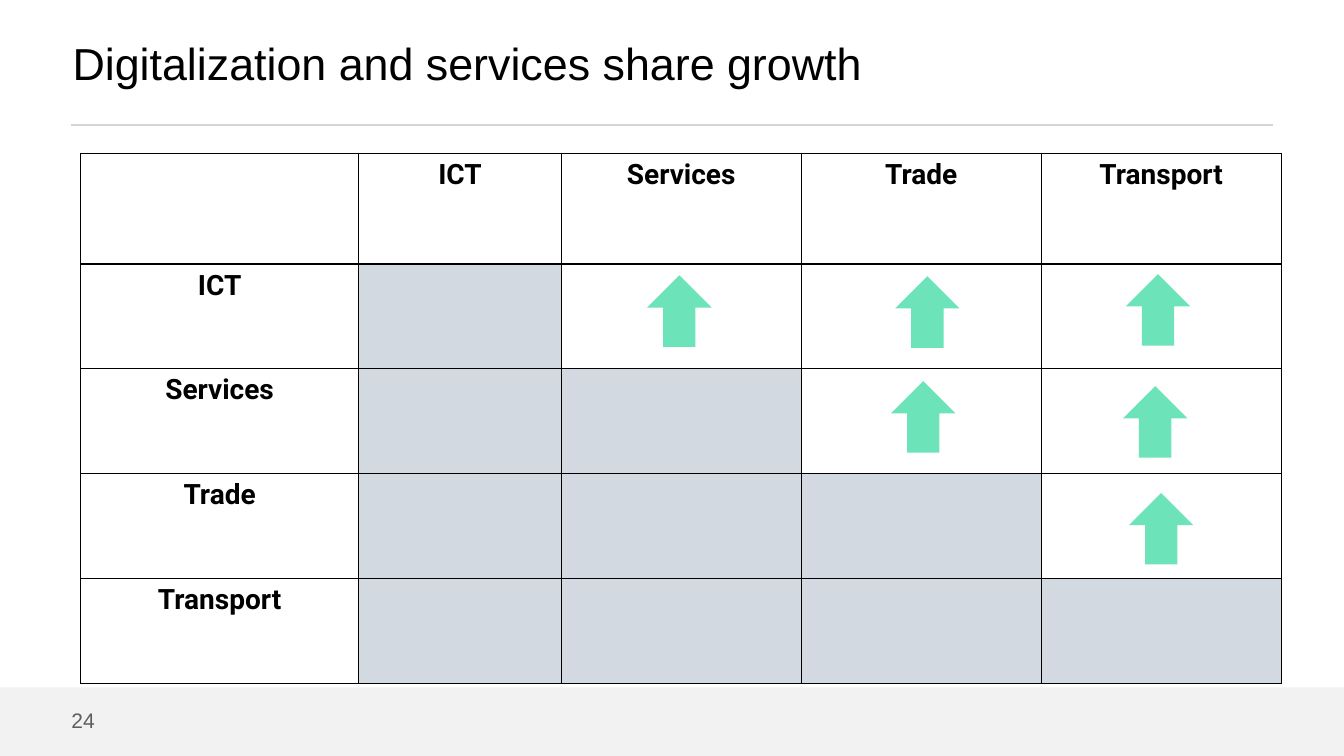
from dataclasses import dataclass
from typing import Any

from lxml import etree
from pptx import Presentation
from pptx.dml.color import RGBColor
from pptx.enum import shapes, text
from pptx.oxml.ns import qn
from pptx.util import Pt


@dataclass(frozen=True)
class Theme:
    ink: str = "000000"
    rule: str = "D5D5D5"
    band: str = "F2F2F2"
    page: str = "5E5E5E"
    shade: str = "D2D9E1"
    rise: str = "6CE3B9"
    head: str = "Arial"
    body: str = "Roboto"
    title: float = 32
    cell: float = 20
    foot: float = 15


@dataclass(frozen=True)
class Arrow:
    left: float
    top: float


THEME = Theme()
SECTORS = ["ICT", "Services", "Trade", "Transport"]
COLS = [198.7, 144.7] + [171.4] * 3
ROWS = [79.2] + [74.9] * 4
ARROWS = [
    Arrow(636.5, 272.2),
    Arrow(639.4, 197.3),
    Arrow(804.2, 195.8),
    Arrow(802.1, 275.8),
    Arrow(462.2, 196.6),
    Arrow(806.4, 352.1),
]


def paint(fill: Any, hue: str) -> None:
    fill.solid()
    fill.fore_color.rgb = RGBColor.from_string(hue)


def style(para: Any, face: str, size: float, hue: str, bold: bool = False) -> None:
    for run in para.runs:
        run.font.name = face
        run.font.size = Pt(size)
        run.font.bold = bold
        run.font.color.rgb = RGBColor.from_string(hue)


def inset(frame: Any) -> None:
    """Remove the margins and centre the text vertically."""
    frame.margin_left = frame.margin_right = 0
    frame.margin_top = frame.margin_bottom = 0
    frame.vertical_anchor = text.MSO_ANCHOR.MIDDLE


def solid(slide: Any, kind: Any, box: tuple[float, ...], hue: str) -> None:
    """Add a filled shape without line or shadow."""
    shape = slide.shapes.add_shape(kind, *map(Pt, box))
    shape.shadow.inherit = False
    paint(shape.fill, hue)
    shape.line.fill.background()


def border(cell: Any) -> None:
    props = cell._tc.get_or_add_tcPr()
    for spot, side in enumerate(("lnL", "lnR", "lnT", "lnB")):
        line = etree.Element(qn(f"a:{side}"), w=str(Pt(1)))
        fill = etree.SubElement(line, qn("a:solidFill"))
        etree.SubElement(fill, qn("a:srgbClr"), val=THEME.ink)
        props.insert(spot, line)


def frame(slide: Any) -> None:
    """Add the rule, the footer band and the page number."""
    rule = slide.shapes.add_connector(
        shapes.MSO_CONNECTOR.STRAIGHT, Pt(51), Pt(89.3), Pt(909.4), Pt(89.3))
    rule.line.color.rgb = RGBColor.from_string(THEME.rule)
    rule.line.width = Pt(1.5)
    etree.SubElement(rule._element.spPr, qn("a:effectLst"))
    solid(slide, shapes.MSO_SHAPE.RECTANGLE, (0, 491, 960, 49), THEME.band)
    page = slide.shapes.add_textbox(Pt(51), Pt(505.4), Pt(17), Pt(18)).text_frame
    page.text = "24"
    page.word_wrap = False
    page.auto_size = text.MSO_AUTO_SIZE.SHAPE_TO_FIT_TEXT
    inset(page)
    style(page.paragraphs[0], THEME.head, THEME.foot, THEME.page)


def title(slide: Any) -> None:
    shape = slide.shapes.title
    shape.left, shape.top, shape.width, shape.height = map(Pt, (51.8, 0, 725, 89.3))
    body = shape.text_frame
    body.text = "Digitalization and services share growth"
    body.auto_size = text.MSO_AUTO_SIZE.NONE
    inset(body)
    para = body.paragraphs[0]
    para.alignment = text.PP_ALIGN.LEFT
    props = para._p.get_or_add_pPr()
    props.set("marL", str(Pt(36)))
    props.set("indent", str(-Pt(36)))
    style(para, THEME.head, THEME.title, THEME.ink)


def matrix(slide: Any) -> None:
    """Add the sector table, shaded on and below its diagonal."""
    grid = slide.shapes.add_table(
        len(ROWS), len(COLS), Pt(57.6), Pt(109.4), Pt(sum(COLS)), Pt(sum(ROWS))).table
    grid.first_row = grid.horz_banding = False
    for col, width in zip(grid.columns, COLS):
        col.width = Pt(width)
    for row, height in zip(grid.rows, ROWS):
        row.height = Pt(height)
    names = [""] + SECTORS
    for r in range(len(ROWS)):
        for c in range(len(COLS)):
            cell = grid.cell(r, c)
            if 0 < c <= r:
                paint(cell.fill, THEME.shade)
            else:
                cell.fill.background()
            border(cell)
            if r * c == 0:
                cell.text_frame.text = names[r + c]
                para = cell.text_frame.paragraphs[0]
                para.alignment = text.PP_ALIGN.CENTER
                style(para, THEME.body, THEME.cell, THEME.ink, True)


def main() -> None:
    deck = Presentation()
    deck.slide_width, deck.slide_height = Pt(960), Pt(540)
    slide = deck.slides.add_slide(deck.slide_layouts[5])
    frame(slide)
    title(slide)
    matrix(slide)
    for arrow in ARROWS:
        solid(slide, shapes.MSO_SHAPE.UP_ARROW,
              (arrow.left, arrow.top, 46.1, 51.1), THEME.rise)
    deck.save("out.pptx")


if __name__ == "__main__":
    main()
